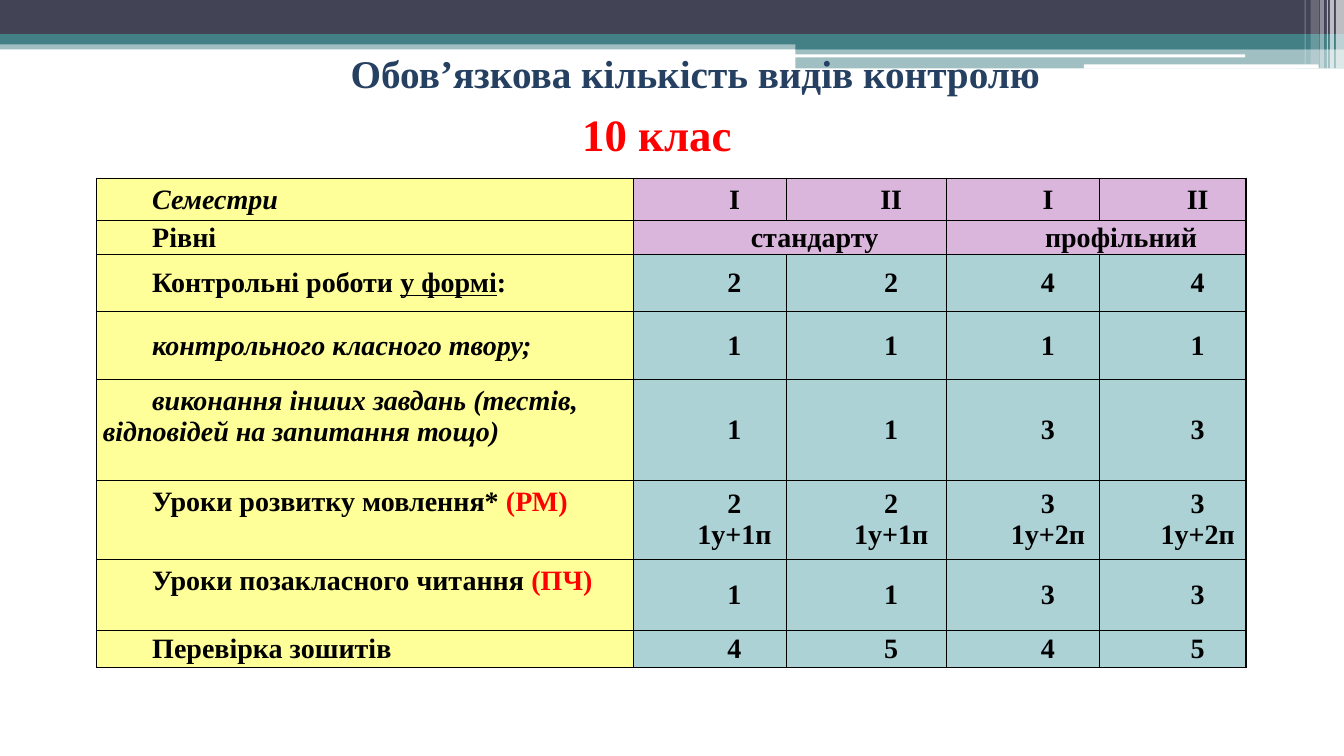
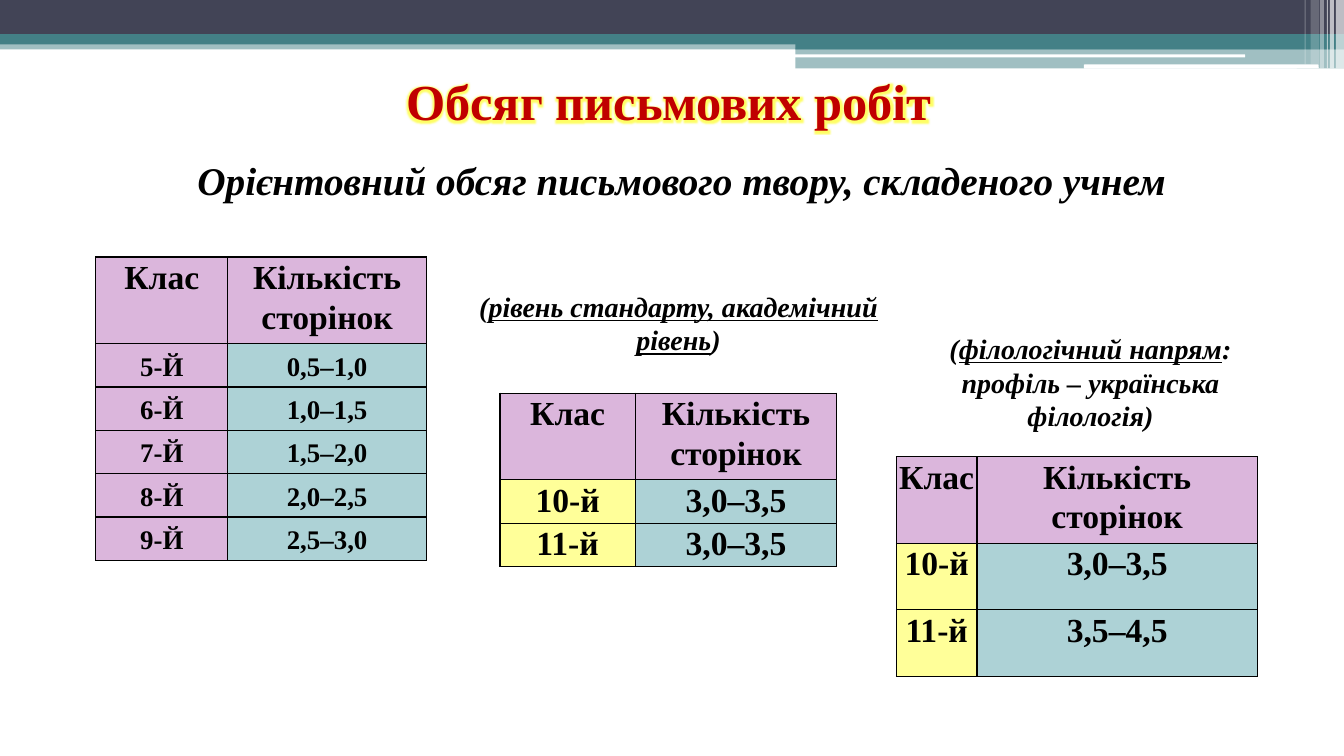
from lxml import etree
from pptx import Presentation
from pptx.dml.color import RGBColor as RGB
from pptx.enum.shapes import MSO_SHAPE as Shape
from pptx.enum.text import MSO_ANCHOR as Anchor, PP_ALIGN as Align
from pptx.oxml.ns import qn
from pptx.util import Inches, Pt

WIDE, HIGH = 13.33, 7.5
FONT = "Times New Roman"
BLACK = RGB(0x00, 0x00, 0x00)
WHITE = RGB(0xFF, 0xFF, 0xFF)
RED = RGB(0xFF, 0x00, 0x00)
CRIMSON = RGB(0xC0, 0x00, 0x00)
NAVY = RGB(0x25, 0x40, 0x61)
SLATE = RGB(0x42, 0x44, 0x56)
TEAL = RGB(0x43, 0x80, 0x86)
YELLOW = RGB(0xFF, 0xFF, 0x99)
GLOW = RGB(0xFF, 0xFF, 0x66)
LILAC = RGB(0xDB, 0xB6, 0xDC)
AQUA = RGB(0xAD, 0xD2, 0xD6)
INDENT = 0.49

# left, top, width, height, colour, opacity in percent
BANDS = [
    (0, 0.4, WIDE, 0.09, TEAL, 50),
    (0, 0, WIDE, 0.34, SLATE, 100),
    (0, 0.34, WIDE, 0.1, TEAL, 100),
    (7.89, 0.39, 5.44, 0.1, TEAL, 100),
    (7.89, 0.48, 5.44, 0.2, TEAL, 50),
    (7.88, 0.54, 4.47, 0.03, WHITE, 100),
    (10.75, 0.64, 2.33, 0.04, WHITE, 100),
    (13.25, 0, 0.08, 0.68, WHITE, 65),
    (13.19, 0, 0.04, 0.68, WHITE, 65),
    (13.16, 0, 0.01, 0.68, WHITE, 60),
    (13.09, 0, 0.04, 0.68, WHITE, 40),
    (13, 0, 0.08, 0.64, WHITE, 20),
    (12.94, 0, 0.01, 0.64, WHITE, 30),
]


def inch(*sizes):
    return [Inches(size) for size in sizes]


def add(parent, tag, **attrs):
    node = etree.SubElement(parent, qn(tag))
    for name, value in attrs.items():
        node.set(name, str(value))
    return node


def paint(parent, color):
    return add(add(parent, "a:solidFill"), "a:srgbClr", val=color)


def add_bands(slide, layout):
    """Draw the header bands and move them to the layout all slides share."""
    for left, top, width, height, color, alpha in BANDS:
        kind = Shape.RECTANGLE
        if color == WHITE and width > 1:
            kind = Shape.ROUNDED_RECTANGLE
        band = slide.shapes.add_shape(kind, *inch(left, top, width, height))
        band.shadow.inherit = False
        band.fill.solid()
        band.fill.fore_color.rgb = color
        band.line.fill.background()
        if alpha < 100:
            tone = band.element.spPr.find(".//" + qn("a:srgbClr"))
            add(tone, "a:alpha", val=alpha * 1000)
        layout.shapes.element.append(band.element)


def write(frame, text, size, color=BLACK, italic=False, align=Align.CENTER,
          indent=0, pitch=None, small=False):
    """Fill a frame; text is a string, or a list of strings and (text, mark)."""
    lines = text.split("\n") if isinstance(text, str) else [text]
    for num, line in enumerate(lines):
        para = frame.add_paragraph() if num else frame.paragraphs[0]
        para.alignment = align
        if pitch:
            para.line_spacing = pitch
        font = para.font
        font.name, font.size, font.bold = FONT, Pt(size), True
        font.italic = italic
        font.color.rgb = color
        props = para._p.get_or_add_pPr()
        if indent:
            props.set("indent", str(Inches(indent)))
        if small:
            props.find(qn("a:defRPr")).set("cap", "small")
        for part in [line] if isinstance(line, str) else line:
            words, mark = (part, "") if isinstance(part, str) else part
            run = para.add_run()
            run.text = words
            if mark == "under":
                run.font.underline = True
            elif mark == "red":
                run.font.color.rgb = RED


def add_text(slide, box, text, size, wrap=True, **style):
    frame = slide.shapes.add_textbox(*inch(*box)).text_frame
    frame.word_wrap = wrap
    write(frame, text, size, **style)
    return frame


def add_title(slide, box, text, size, color, glow=None, **style):
    frame = add_text(slide, box, text, size, color=color, **style)
    props = frame.paragraphs[0].runs[0]._r.get_or_add_rPr()
    paint(add(props, "a:ln", w=Pt(0.75)), color)
    paint(props, color)
    if glow:
        halo = add(add(props, "a:effectLst"), "a:glow", rad=Pt(5))
        add(halo, "a:srgbClr", val=glow)


def edge(cell):
    props = cell._tc.get_or_add_tcPr()
    for num, side in enumerate("LRTB"):
        line = add(props, "a:ln" + side, w=Pt(1))
        paint(line, BLACK)
        props.insert(num, line)


def add_grid(slide, left, top, cols, rows, pad, tint):
    """Add an empty table; tint(row, column) gives each cell's fill."""
    box = inch(left, top, sum(cols), sum(rows))
    table = slide.shapes.add_table(len(rows), len(cols), *box).table
    table.first_row = table.horz_banding = False
    for col, width in zip(table.columns, cols):
        col.width = Inches(width)
    for row, height in zip(table.rows, rows):
        row.height = Inches(height)
    for r in range(len(rows)):
        for c in range(len(cols)):
            cell = table.cell(r, c)
            cell.margin_left = cell.margin_right = Inches(pad)
            cell.margin_top = cell.margin_bottom = 0
            cell.fill.solid()
            cell.fill.fore_color.rgb = tint(r, c)
            edge(cell)
    return table


def add_plan(slide, left, top):
    """Add the table of control works by term and level."""
    data = [
        ("Семестри", "І", "ІІ", "І", "ІІ"),
        ("Рівні", "стандарту", None, "профільний", None),
        (["Контрольні роботи ", ("у формі", "under"), ":"], "2", "2", "4", "4"),
        ("контрольного класного твору;", "1", "1", "1", "1"),
        ("виконання інших завдань (тестів, відповідей на запитання тощо)",
         "1", "1", "3", "3"),
        (["Уроки розвитку мовлення* ", ("(РМ)", "red")],
         "2\n1у+1п", "2\n1у+1п", "3\n1у+2п", "3\n1у+2п"),
        (["Уроки позакласного читання ", ("(ПЧ)", "red")], "1", "1", "3", "3"),
        ("Перевірка зошитів", "4", "5", "4", "5"),
    ]
    slanted, raised = (0, 3, 4), (4, 5, 6)

    def tint(r, c):
        return YELLOW if c == 0 else LILAC if r < 2 else AQUA

    table = add_grid(slide, left, top, [5.32, 1.52, 1.59, 1.52, 1.45],
                     [0.42, 0.33, 0.57, 0.67, 1, 0.79, 0.7, 0.37], 0.06, tint)
    for r, row in enumerate(data):
        for c, text in enumerate(row):
            cell = table.cell(r, c)
            if text is None:
                table.cell(r, c - 1).merge(cell)
                continue
            label = c == 0
            cell.vertical_anchor = Anchor.MIDDLE
            if label and r in raised:
                cell.vertical_anchor = Anchor.TOP
                cell.margin_top = Inches(0.06)
            write(cell.text_frame, text, 20, indent=INDENT,
                  italic=label and r in slanted,
                  align=Align.LEFT if label else Align.CENTER)


def add_pages(slide, left, top, cols, step, data, pad=0.07, key=YELLOW,
              small=False):
    """Add a table of page counts by class, with rows one step high."""
    def tint(r, c):
        return LILAC if r == 0 else AQUA if c else key

    rows = [0.86] + [step] * len(data)
    table = add_grid(slide, left, top, cols, rows, pad, tint)
    for r, row in enumerate([("Клас", "Кількість сторінок")] + data):
        for c, text in enumerate(row):
            write(table.cell(r, c).text_frame, text, 24, pitch=1.07,
                  small=small and r > 0)


def fill_control(slide):
    add_text(slide, (5.17, 1.01, 2.2, 0.64), "10 клас", 32, wrap=False,
             color=RED, indent=INDENT)
    add_plan(slide, 0.96, 1.77)
    add_title(slide, (0.74, 0.44, 11.82, 0.57),
              "Обов’язкова кількість видів контролю", 28, NAVY, indent=INDENT)


def fill_volume(slide):
    add_title(slide, (0.69, 0.65, 11.89, 0.71), "Обсяг письмових робіт", 36,
              CRIMSON, glow=GLOW)
    add_text(slide, (0.95, 1.5, 11.62, 0.57),
             "Орієнтовний обсяг письмового твору, складеного учнем", 28,
             italic=True)
    add_pages(slide, 0.95, 2.55, [1.31, 1.97], 0.43,
              [("5-й", "0,5–1,0"), ("6-й", "1,0–1,5"), ("7-й", "1,5–2,0"),
               ("8-й", "2,0–2,5"), ("9-й", "2,5–3,0")],
              key=LILAC, small=True)
    add_text(slide, (4.57, 2.82, 4.32, 0.77),
             ["(", ("рівень стандарту, академічний рівень", "under"), ")"],
             20, italic=True)
    add_pages(slide, 4.96, 3.9, [1.34, 2], 0.43,
              [("10-й", "3,0–3,5"), ("11-й", "3,0–3,5")])
    add_text(slide, (8.89, 3.24, 3.85, 1.11),
             ["(", ("філологічний напрям", "under"),
              ": профіль – українська філологія)"], 20, italic=True)
    add_pages(slide, 8.89, 4.53, [0.8, 2.78], 0.66,
              [("10-й", "3,0–3,5"), ("11-й", "3,5–4,5")], pad=0.01)


def main():
    deck = Presentation()
    deck.slide_width, deck.slide_height = inch(WIDE, HIGH)
    blank = deck.slide_layouts[6]
    first, second = [deck.slides.add_slide(blank) for _ in range(2)]
    add_bands(first, blank)
    fill_control(first)
    fill_volume(second)
    deck.save("out.pptx")


if __name__ == "__main__":
    main()
